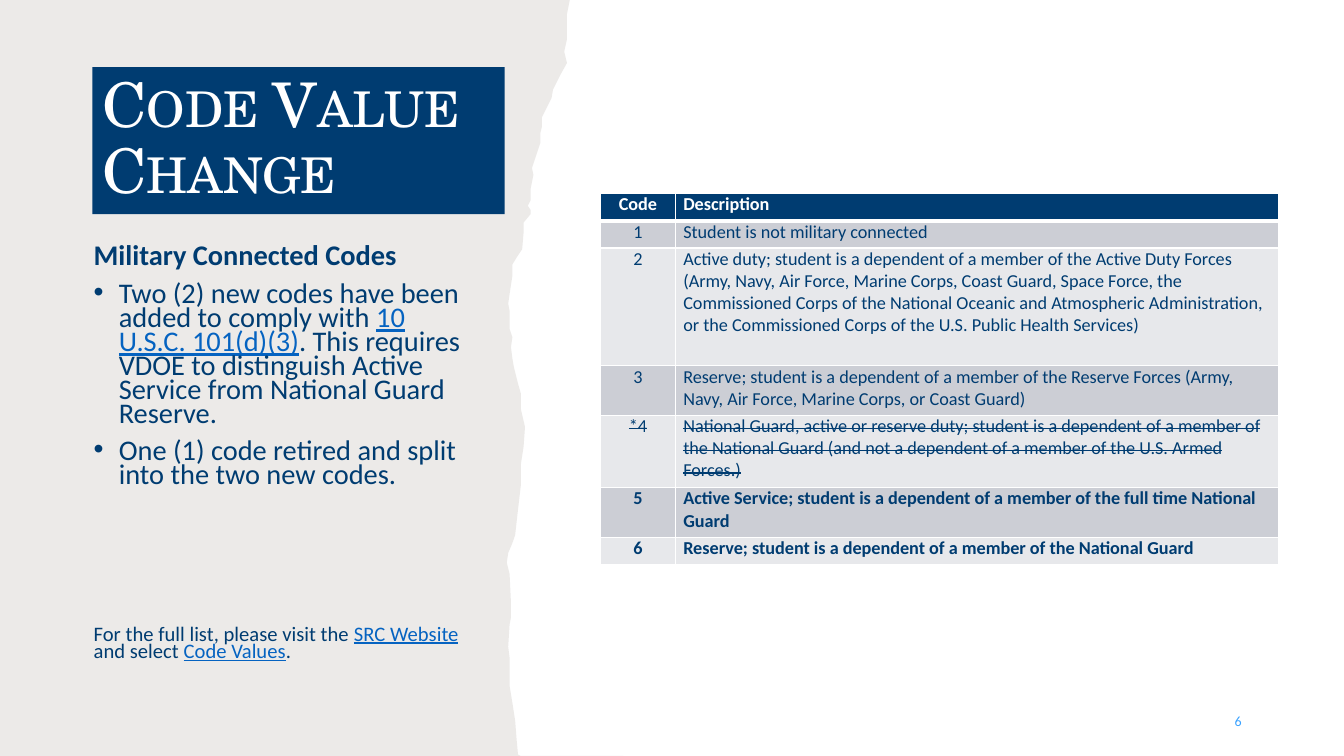
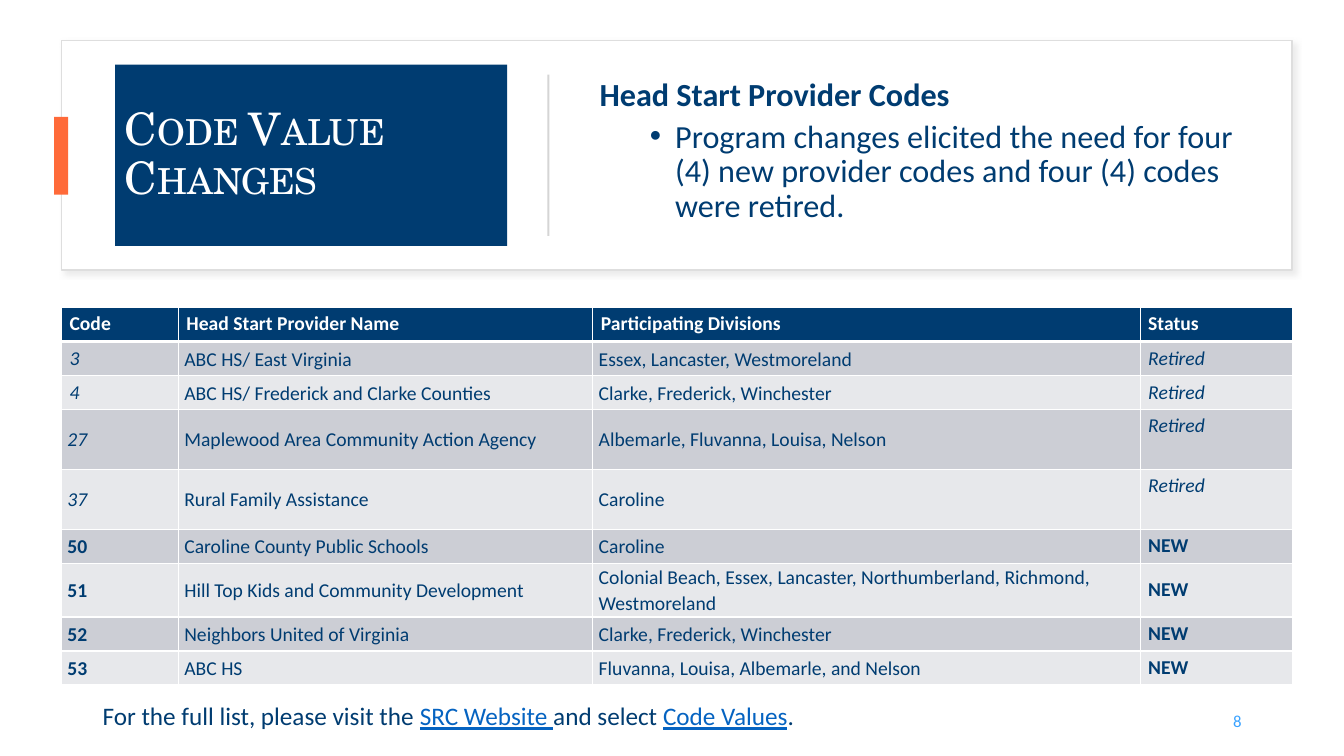
from lxml.etree import SubElement
from pptx import Presentation
from pptx.dml.color import RGBColor
from pptx.enum.shapes import MSO_SHAPE
from pptx.enum.text import MSO_ANCHOR, PP_ALIGN
from pptx.oxml.ns import qn
from pptx.util import Pt

NAVY, WHITE, LINK, PAGE_BLUE = "003C71", "FFFFFF", "0563C1", "39A2FF"
TAUPE, ORANGE, DIVIDER, CARD_EDGE, SHADOW = "82766A", "FF6A39", "D5D5D5", "DEDEDE", "D9D9D9"
BANDS = ("CCCED5", "E7E8EB")
BODY_FONT, TITLE_FONT = "Calibri", "TeX Gyre Schola"
WIDE_INSET, NARROW_INSET, FLAT_INSET = (5.8, 2.9), (4.3, 0), (5.8, 0)

TORN_EDGE = [
    (407, 0), (405, 10), (405, 28), (403, 37), (405, 45), (400, 54), (395, 64), (394, 70),
    (387, 84), (387, 91), (386, 95), (386, 102), (383, 111), (380, 120), (381, 125),
    (379, 135), (379, 143), (377, 147), (379, 150), (379, 153), (374, 159), (374, 166),
    (373, 178), (369, 184), (366, 189), (366, 197), (364, 210), (363, 217), (364, 222),
    (364, 235), (366, 241), (365, 248), (366, 256), (367, 262), (370, 274), (372, 281),
    (372, 292), (375, 305), (374, 319), (372, 332), (372, 347), (370, 364), (369, 373),
    (368, 382), (366, 388), (363, 395), (362, 402), (364, 410), (365, 431), (365, 441),
    (364, 446), (363, 462), (364, 470), (364, 490), (366, 502), (368, 515), (369, 528),
    (370, 539), (372, 540),
]

# A text is a list of pieces; a piece in a tuple is shown as a link.
FULL_LIST = ["For the full list, please visit the ", ("SRC Website ",), "and select ",
             ("Code Values",), "."]

MILITARY_CODES = [
    ("Code", "Description"),
    ("1", "Student is not military connected"),
    ("2", "Active duty; student is a dependent of a member of the Active Duty Forces (Army, Navy, "
          "Air Force, Marine Corps, Coast Guard, Space Force, the Commissioned Corps of the "
          "National Oceanic and Atmospheric Administration, or the Commissioned Corps of the "
          "U.S. Public Health Services)"),
    ("3", "Reserve; student is a dependent of a member of the Reserve Forces (Army, Navy, "
          "Air Force, Marine Corps, or Coast Guard)"),
    ("*4", "National Guard, active or reserve duty; student is a dependent of a member of the "
           "National Guard (and not a dependent of a member of the U.S. Armed Forces.)"),
    ("5", "Active Service; student is a dependent of a member of the full time National Guard"),
    ("6", "Reserve; student is a dependent of a member of the National Guard"),
]

PROVIDER_CODES = [
    ("Code", "Head Start Provider Name", "Participating Divisions", "Status"),
    ("3", "ABC HS/ East Virginia", "Essex, Lancaster, Westmoreland", "Retired"),
    ("4", "ABC HS/ Frederick and Clarke Counties", "Clarke, Frederick, Winchester", "Retired"),
    ("27", "Maplewood Area Community Action Agency", "Albemarle, Fluvanna, Louisa, Nelson",
     "Retired"),
    ("37", "Rural Family Assistance", "Caroline", "Retired"),
    ("50", "Caroline County Public Schools", "Caroline", "NEW"),
    ("51", "Hill Top Kids and Community Development",
     "Colonial Beach, Essex, Lancaster, Northumberland, Richmond, Westmoreland", "NEW"),
    ("52", "Neighbors United of Virginia", "Clarke, Frederick, Winchester", "NEW"),
    ("53", "ABC HS", "Fluvanna, Louisa, Albemarle, and Nelson", "NEW"),
]


def color(value):
    return RGBColor.from_string(value)


class Deck:
    """Holds the shared style and the current slide."""

    def __init__(self):
        self.presentation = Presentation()
        self.presentation.slide_width = Pt(960)
        self.presentation.slide_height = Pt(540)
        self.slide = None

    def new_slide(self):
        self.slide = self.presentation.slides.add_slide(self.presentation.slide_layouts[6])

    def paint(self, shape, fill, line=None):
        shape.shadow.inherit = False
        shape.fill.solid()
        shape.fill.fore_color.rgb = color(fill)
        if line:
            shape.line.color.rgb = color(line)
            shape.line.width = Pt(1)
        else:
            shape.line.fill.background()

    def rectangle(self, left, top, width, height, fill, line=None):
        shape = self.slide.shapes.add_shape(
            MSO_SHAPE.RECTANGLE, Pt(left), Pt(top), Pt(width), Pt(height))
        self.paint(shape, fill, line)
        return shape

    def torn_panel(self):
        builder = self.slide.shapes.build_freeform(0, 0, scale=Pt(1))
        builder.add_line_segments(TORN_EDGE + [(445, 540), (0, 540)], close=True)
        shape = builder.convert_to_shape()
        self.paint(shape, TAUPE)
        fill_color = shape._element.spPr.find(qn("a:solidFill"))[0]
        SubElement(fill_color, qn("a:alpha"), val="15000")

    def card(self, left, top, width, height):
        shape = self.rectangle(left, top, width, height, WHITE, CARD_EDGE)
        effects = shape._element.spPr.find(qn("a:effectLst"))
        shadow = SubElement(effects, qn("a:outerShdw"), blurRad=str(Pt(4)), dist=str(Pt(3)),
                            dir=str(45 * 60000), algn="tl", rotWithShape="0")
        shade = SubElement(shadow, qn("a:srgbClr"), val=SHADOW)
        SubElement(shade, qn("a:alpha"), val="50000")

    def fill_paragraph(self, paragraph, pieces, size, ink=NAVY, font=BODY_FONT, bold=False,
                       italic=False, strike=False, align=PP_ALIGN.LEFT, spacing=None,
                       before=None, after=None, bullet_indent=None):
        if bullet_indent:
            properties = paragraph._p.get_or_add_pPr()
            properties.set("marL", str(Pt(bullet_indent)))
            properties.set("indent", str(Pt(-18)))
            bullet_color = SubElement(properties, qn("a:buClr"))
            SubElement(bullet_color, qn("a:srgbClr"), val=NAVY)
            SubElement(properties, qn("a:buFont"), typeface="Arial")
            SubElement(properties, qn("a:buChar"), char="•")
        paragraph.alignment = align
        if spacing:
            paragraph.line_spacing = spacing
        if before is not None:
            paragraph.space_before = Pt(before)
        if after is not None:
            paragraph.space_after = Pt(after)
        paragraph.font.name = font
        paragraph.font.size = Pt(size)
        paragraph.font.bold = bold
        paragraph.font.italic = italic
        paragraph.font.color.rgb = color(ink)
        for piece in pieces:
            run = paragraph.add_run()
            run.text = piece if isinstance(piece, str) else piece[0]
            if isinstance(piece, tuple):
                run.font.underline = True
                run.font.color.rgb = color(LINK)
            if strike:
                run._r.get_or_add_rPr().set("strike", "sngStrike")

    def title(self, left, top, width, height, text, size):
        frame = self.rectangle(left, top, width, height, NAVY).text_frame
        frame.word_wrap = True
        frame.vertical_anchor = MSO_ANCHOR.MIDDLE
        paragraph = frame.paragraphs[0]
        self.fill_paragraph(paragraph, [text], size, ink=WHITE, font=TITLE_FONT, spacing=0.9)
        paragraph.runs[0]._r.get_or_add_rPr().set("cap", "small")

    def text(self, left, top, width, height, paragraphs, anchor=MSO_ANCHOR.TOP, **style):
        """Each paragraph is (pieces, its own style)."""
        box = self.slide.shapes.add_textbox(Pt(left), Pt(top), Pt(width), Pt(height))
        frame = box.text_frame
        frame.word_wrap = True
        frame.vertical_anchor = anchor
        for index, (pieces, own_style) in enumerate(paragraphs):
            paragraph = frame.add_paragraph() if index else frame.paragraphs[0]
            self.fill_paragraph(paragraph, pieces, **{**style, **own_style})

    def page_number(self, number, size):
        self.text(678, 500.4, 216, 28.8, [([str(number)], {})], MSO_ANCHOR.MIDDLE,
                  size=size, ink=PAGE_BLUE, align=PP_ALIGN.RIGHT, after=6)

    def borders(self, cell, row):
        widths = {"L": 1, "R": 1, "T": 3 if row == 1 else 1, "B": 3 if row == 0 else 1}
        properties = cell._tc.get_or_add_tcPr()
        for side, width in widths.items():
            line = SubElement(properties, qn("a:ln" + side), w=str(Pt(width)))
            fill = SubElement(line, qn("a:solidFill"))
            SubElement(fill, qn("a:srgbClr"), val=WHITE)

    def table(self, left, top, widths, heights, rows, size, cell_style):
        """cell_style(row, column) gives the inset, the anchor and the text style."""
        table = self.slide.shapes.add_table(
            len(rows), len(widths), Pt(left), Pt(top), Pt(sum(widths)), Pt(sum(heights))).table
        table.first_row = table.horz_banding = False
        for column, width in enumerate(widths):
            table.columns[column].width = Pt(width)
        for row, (height, texts) in enumerate(zip(heights, rows)):
            table.rows[row].height = Pt(height)
            for column, text in enumerate(texts):
                cell = table.cell(row, column)
                (side, edge), anchor, style = cell_style(row, column)
                cell.margin_left = cell.margin_right = Pt(side)
                cell.margin_top = cell.margin_bottom = Pt(edge)
                cell.vertical_anchor = anchor
                self.borders(cell, row)
                cell.fill.solid()
                cell.fill.fore_color.rgb = color(BANDS[(row - 1) % 2] if row else NAVY)
                if row == 0:
                    style = {**style, "ink": WHITE, "bold": True}
                self.fill_paragraph(cell.text_frame.paragraphs[0], [text], size, **style)


def military_cell(row, column):
    style = {"bold": row >= 5, "strike": row == 4}
    if column == 0:
        style["align"] = PP_ALIGN.CENTER
    elif row:
        style.update(before=2, after=2)
    return FLAT_INSET, MSO_ANCHOR.TOP, style


def provider_cell(row, column):
    if row == 0:
        return WIDE_INSET, MSO_ANCHOR.TOP, {}
    style = {}
    if column in (0, 3):
        style = {"italic": row <= 4, "bold": row > 4}
    wide = column == 3 or (column == 0 and row <= 2)
    if not wide:
        style["spacing"] = 1.07
    high = column == 3 and row in (3, 4)
    return (WIDE_INSET if wide else NARROW_INSET,
            MSO_ANCHOR.TOP if high else MSO_ANCHOR.MIDDLE, style)


def military_slide(deck):
    deck.new_slide()
    deck.torn_panel()
    deck.title(66, 48, 294.5, 105, "Code Value Change", 44)
    # Explanation and note on the panel
    deck.text(59.8, 172.8, 278, 260, [
        (["Military Connected Codes"], {"bold": True}),
        (["Two (2) new codes have been added to comply with ", ("10 U.S.C. 101(d)(3)",),
          ". This requires VDOE to distinguish Active Service from National Guard Reserve."],
         {"bullet_indent": 18}),
        (["One (1) code retired and split into the two new codes."], {"bullet_indent": 18}),
    ], size=20.3, spacing=0.7, before=10)
    deck.text(59.8, 444.5, 278, 36, [(FULL_LIST, {})], size=14.7, spacing=0.7)
    deck.page_number(6, 10)
    # Codes
    deck.table(429, 138.3, [53.3, 431.2], [19.4, 19.4, 84.2, 35.3, 51.8, 35.3, 19.4],
               MILITARY_CODES, 13, military_cell)


def provider_slide(deck):
    deck.new_slide()
    # Header card
    deck.card(43.9, 28.8, 879, 164.2)
    deck.title(82.2, 46.2, 280, 129.5, "Code Value Changes", 32)
    deck.rectangle(38.7, 83.5, 10, 55.5, ORANGE)
    deck.rectangle(391, 53.3, 1.4, 115.2, DIVIDER)
    deck.text(421.2, 41, 472.3, 134.6, [
        (["Head Start Provider Codes"], {"bold": True, "before": 10}),
        (["Program changes elicited the need for four (4) new provider codes and four (4) codes "
          "were retired."], {"bullet_indent": 54, "before": 5}),
    ], MSO_ANCHOR.MIDDLE, size=23, spacing=0.9)
    deck.page_number(8, 12)
    # Providers and note
    deck.table(43.9, 219.6, [83.5, 296, 391, 108.7],
               [24.3, 24.3, 24.3, 42.8, 42.8, 24.3, 38.4, 24.3, 24.3],
               PROVIDER_CODES, 14, provider_cell)
    deck.text(66.2, 496.8, 588, 28.8, [(FULL_LIST, {})], size=18)


def main():
    deck = Deck()
    military_slide(deck)
    provider_slide(deck)
    deck.presentation.save("out.pptx")


if __name__ == "__main__":
    main()
